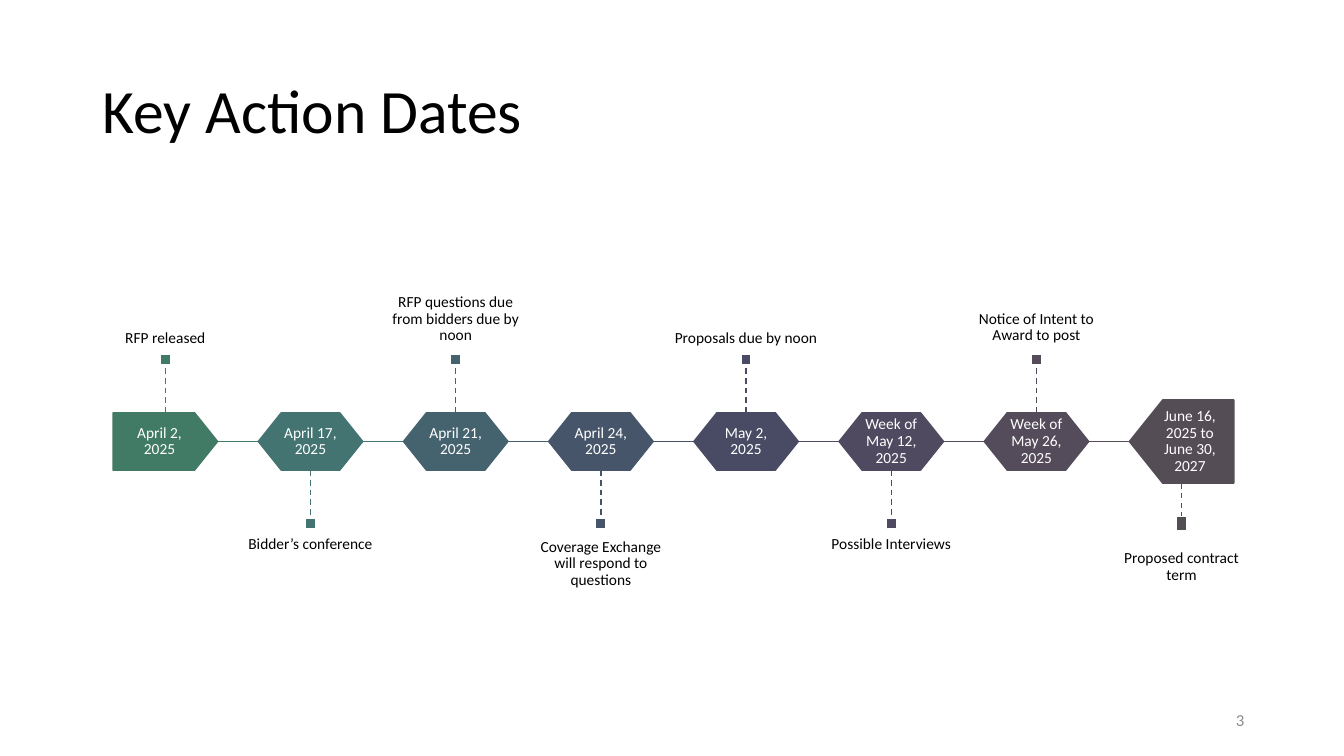
from lxml.etree import SubElement
from pptx import Presentation
from pptx.dml.color import RGBColor
from pptx.enum.dml import MSO_LINE
from pptx.enum.shapes import MSO_CONNECTOR, MSO_SHAPE
from pptx.enum.text import MSO_ANCHOR, PP_ALIGN
from pptx.oxml.ns import qn
from pptx.util import Inches, Pt


def rgb(value):
    return RGBColor.from_string(value)


class Timeline:
    """Draws on a grid of eight columns, with rows counted from the time axis."""

    FONT = "Calibri"
    LEFT, AXIS = 0.92, 4.38
    COL, ROW = 1.44, 0.57

    def __init__(self, slide):
        self.s = slide

    def x(self, col):
        return Inches(self.LEFT + col * self.COL)

    def y(self, row):
        return Inches(self.AXIS + row * self.ROW)

    def box(self, col, row, cols, rows):
        left, top = self.x(col), self.y(row)
        return left, top, self.x(col + cols) - left, self.y(row + rows) - top

    def set_text(self, sp, text, size, color, align, anchor, margins):
        tf = sp.text_frame
        tf.word_wrap = True
        tf.vertical_anchor = anchor
        tf.margin_left = tf.margin_right = Inches(margins[0])
        tf.margin_top = tf.margin_bottom = Inches(margins[1])
        tf.text = text
        p = tf.paragraphs[0]
        p.alignment = align
        p.line_spacing = 0.9
        font = p.runs[0].font
        font.name, font.size = self.FONT, Pt(size)
        font.color.rgb = rgb(color)

    def text(self, text, col, row, cols, rows, size=11, color="000000",
             align=PP_ALIGN.CENTER, anchor=MSO_ANCHOR.MIDDLE, margins=(0, 0.11)):
        sp = self.s.shapes.add_textbox(*self.box(col, row, cols, rows))
        self.set_text(sp, text, size, color, align, anchor, margins)

    def shape(self, kind, center, row, cols, rows, fill, line):
        sp = self.s.shapes.add_shape(
            kind, *self.box(center - cols / 2, row - rows / 2, cols, rows))
        sp.shadow.inherit = False
        sp.fill.solid()
        sp.fill.fore_color.rgb = rgb(fill)
        sp.line.color.rgb = rgb(line)
        sp.line.width = Pt(1)
        return sp

    def date(self, text, kind, center, rows, color, flip=False):
        sp = self.shape(kind, center, 0, WIDTH, rows, color, color)
        sp.adjustments[0] = 0.4
        if flip:
            sp._element.spPr.find(qn("a:xfrm")).set("flipH", "1")
        self.set_text(sp, text, 11, "FFFFFF", PP_ALIGN.CENTER,
                      MSO_ANCHOR.MIDDLE, (0.09, 0.09))

    def line(self, col1, row1, col2, row2, color, dashed=False):
        cn = self.s.shapes.add_connector(
            MSO_CONNECTOR.STRAIGHT,
            self.x(col1), self.y(row1), self.x(col2), self.y(row2))
        cn.line.color.rgb = rgb(color)
        cn.line.width = Pt(1)
        if dashed:
            cn.line.dash_style = MSO_LINE.DASH
        SubElement(cn._element.spPr, qn("a:effectLst"))


WIDTH = 0.72
LABEL_ROWS = 2.67
EVENTS = [
    ("April 2, 2025", "RFP released", "417A65"),
    ("April 17, 2025", "Bidder’s conference", "437472"),
    ("April 21, 2025", "RFP questions due from bidders due by noon", "45636F"),
    ("April 24, 2025", "Coverage Exchange will respond to questions", "47556A"),
    ("May 2, 2025", "Proposals due by noon", "494B65"),
    ("Week of May 12, 2025", "Possible Interviews", "4F4A60"),
    ("Week of May 26, 2025", "Notice of Intent to Award to post", "544C5B"),
    ("June 16, 2025 to June 30, 2027", "Proposed contract term", "554D56"),
]
LINKS = ["417A65", "437374", "465E6D", "484F67", "4D4A61", "544B5C", "554D56"]


def main():
    prs = Presentation()
    prs.slide_width, prs.slide_height = Inches(13.33), Inches(7.5)
    t = Timeline(prs.slides.add_slide(prs.slide_layouts[6]))

    t.text("Key Action Dates", 0, -6.97, 8, 2.54, size=44,
           align=PP_ALIGN.LEFT, margins=(0.1, 0.05))

    for i, color in enumerate(LINKS):
        t.line(i + 0.5 + WIDTH / 2, 0, i + 1.5 - WIDTH / 2, 0, color)

    last = len(EVENTS) - 1
    for i, (date, label, color) in enumerate(EVENTS):
        center = i + 0.5
        side = 1 if i % 2 else -1
        rows = 1.45 if i == last else 1
        kind = MSO_SHAPE.PENTAGON if i in (0, last) else MSO_SHAPE.HEXAGON
        t.date(date, kind, center, rows, color, flip=i == last)
        t.line(center, side * rows / 2, center, side * 1.35, color, dashed=True)
        t.shape(MSO_SHAPE.RECTANGLE, center, side * 1.43, 0.07,
                0.25 if i == last else 0.18, color, "FFFFFF")
        if side < 0:
            t.text(label, i, -1.5 - LABEL_ROWS, 1, LABEL_ROWS,
                   anchor=MSO_ANCHOR.BOTTOM)
        else:
            t.text(label, i, 1.7 if i == last else 1.5, 1, LABEL_ROWS,
                   anchor=MSO_ANCHOR.TOP)

    t.text("3", 5.91, 4.52, 2.09, 0.7, size=12, color="8C8C8C",
           align=PP_ALIGN.RIGHT, margins=(0.1, 0.05))
    prs.save("out.pptx")


if __name__ == "__main__":
    main()
